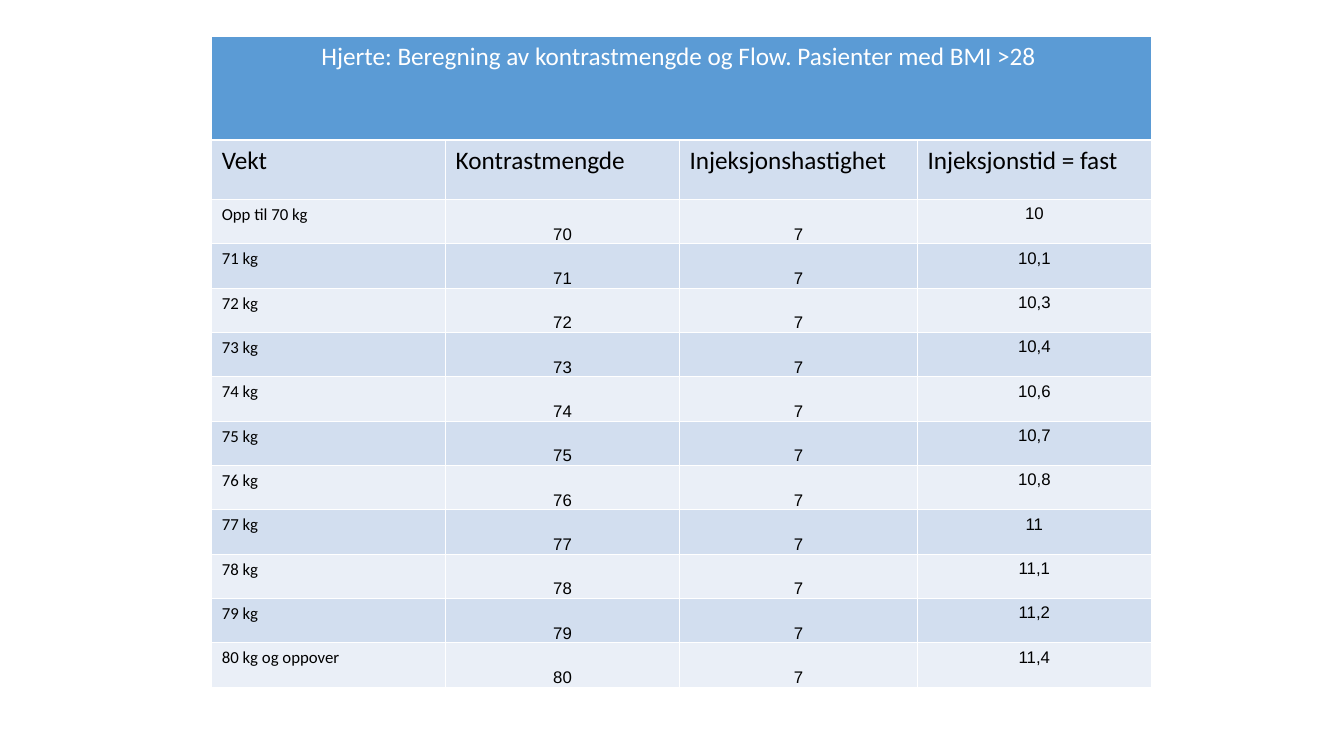
import pptx
import pptx.dml.color
import pptx.enum.text
import pptx.oxml
import pptx.oxml.ns
import pptx.util

Inches = pptx.util.Inches
Pt = pptx.util.Pt
Align = pptx.enum.text.PP_ALIGN
Anchor = pptx.enum.text.MSO_ANCHOR

COLOURS = {
    "title": "5B9BD5",
    "dark band": "D2DEEF",
    "light band": "EAEFF7",
    "border": "FFFFFF",
    "title text": "FFFFFF",
    "text": "000000",
}
TITLE = "Hjerte: Beregning av kontrastmengde og Flow. Pasienter med BMI >28 "
HEADINGS = ["Vekt", "Kontrastmengde", "Injeksjonshastighet", "Injeksjonstid = fast"]
FLOW = "7"
TIMES = ["10", "10,1", "10,3", "10,4", "10,6", "10,7", "10,8", "11", "11,1", "11,2", "11,4"]
FIRST_WEIGHT = 70
LAST_WEIGHT = FIRST_WEIGHT + len(TIMES) - 1
WEIGHT_LABELS = {FIRST_WEIGHT: "Opp til 70 kg", LAST_WEIGHT: "80 kg og oppover"}
COLUMN_WIDTHS = [2.32, 2.32, 2.36, 2.32]
ROW_HEIGHTS = [1.03, 0.59] + [0.44] * len(TIMES)


def write_cell(cell, text, size=12, font="Calibri", colour="text", align=Align.LEFT, tight=False):
    """Write a cell; a tight one has thin margins and its text at the bottom."""
    if tight:
        cell.margin_left = cell.margin_right = cell.margin_top = Inches(0.01)
        cell.margin_bottom = 0
        cell.vertical_anchor = Anchor.BOTTOM
    para = cell.text_frame.paragraphs[0]
    para.alignment = align
    span = para.add_run()
    span.text = text
    span.font.size = Pt(size)
    span.font.name = font
    span.font.bold = False
    span.font.color.rgb = pptx.dml.color.RGBColor.from_string(COLOURS[colour])


def paint_cell(cell, colour):
    """Give a cell its white borders and its fill."""
    properties = cell._tc.get_or_add_tcPr()
    for side in ("lnL", "lnR", "lnT", "lnB"):
        properties.append(pptx.oxml.parse_xml(
            f'<a:{side} {pptx.oxml.ns.nsdecls("a")} w="{Pt(1)}"><a:solidFill>'
            f'<a:srgbClr val="{COLOURS["border"]}"/></a:solidFill></a:{side}>'))
    cell.fill.solid()
    cell.fill.fore_color.rgb = pptx.dml.color.RGBColor.from_string(COLOURS[colour])


deck = pptx.Presentation()
deck.slide_width = Inches(13.33)
deck.slide_height = Inches(7.5)
page = deck.slides.add_slide(deck.slide_layouts[6])

table = page.shapes.add_table(
    len(ROW_HEIGHTS), len(COLUMN_WIDTHS), Inches(2.1), Inches(0.36),
    Inches(sum(COLUMN_WIDTHS)), Inches(sum(ROW_HEIGHTS))).table
for column, width in zip(table.columns, COLUMN_WIDTHS):
    column.width = Inches(width)

for index, (row, height) in enumerate(zip(table.rows, ROW_HEIGHTS)):
    row.height = Inches(height)
    band = "title" if index == 0 else "dark band" if index % 2 else "light band"
    for cell in row.cells:
        paint_cell(cell, band)

table.cell(0, 0).merge(table.cell(0, len(COLUMN_WIDTHS) - 1))
write_cell(table.cell(0, 0), TITLE, size=18, colour="title text", align=Align.CENTER)
for column, heading in enumerate(HEADINGS):
    write_cell(table.cell(1, column), heading, size=18)

for index, time in enumerate(TIMES):
    weight = FIRST_WEIGHT + index
    label, amount, flow, duration = table.rows[index + 2].cells
    write_cell(label, WEIGHT_LABELS.get(weight, f"{weight} kg"))
    write_cell(amount, str(weight), font="Arial", align=Align.CENTER, tight=True)
    write_cell(flow, FLOW, font="Arial", align=Align.CENTER, tight=True)
    write_cell(duration, time, font="Arial", align=Align.CENTER)

deck.save("out.pptx")
